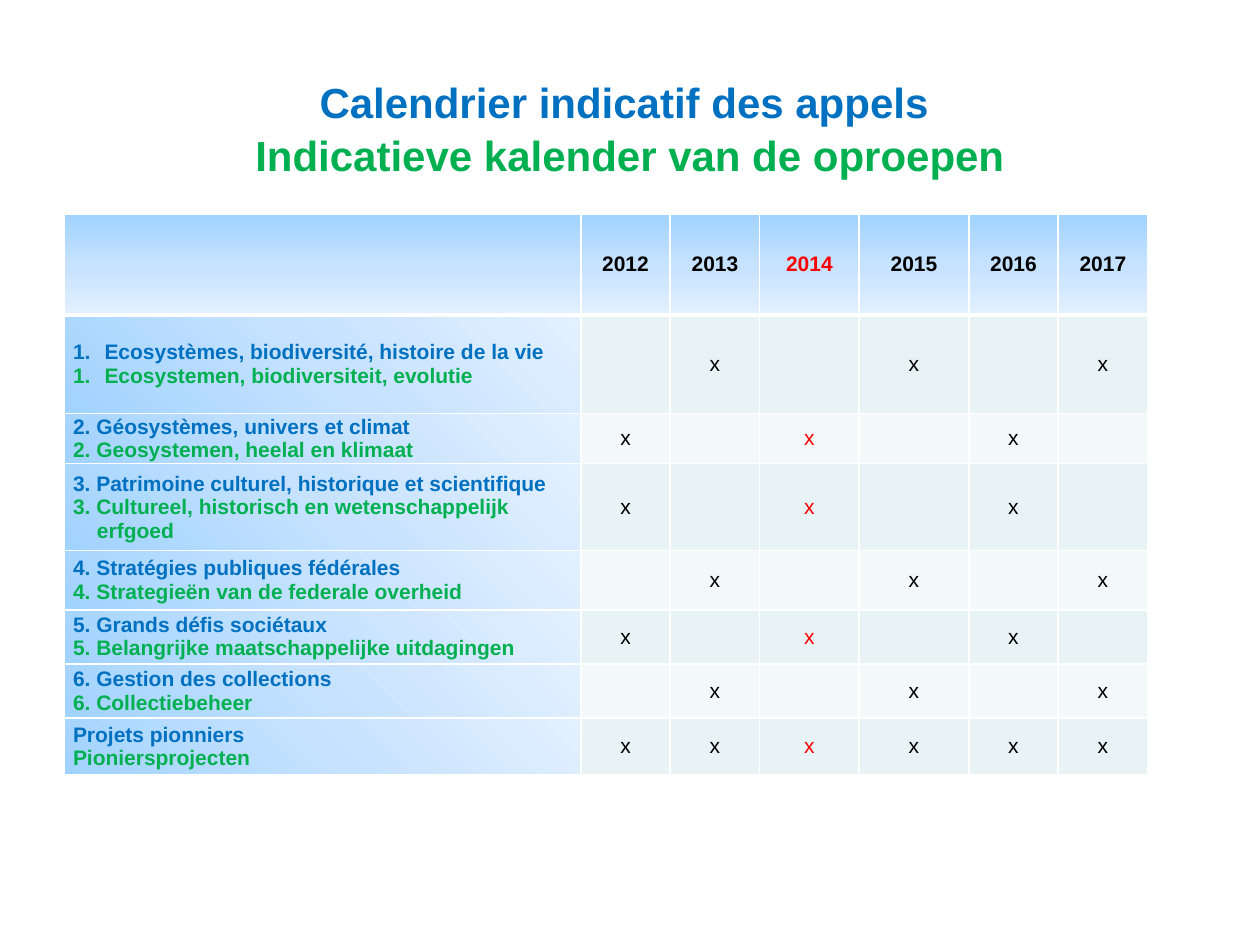
from dataclasses import dataclass

from lxml.etree import SubElement
from pptx import Presentation
from pptx.dml.color import RGBColor
from pptx.enum.text import MSO_ANCHOR as Anchor, PP_ALIGN as Align
from pptx.oxml.ns import qn
from pptx.util import Inches, Pt


@dataclass(frozen=True)
class Theme:
    font: str = "Arial"
    title_size: int = 24
    body_size: int = 12
    french: str = "0070C0"
    dutch: str = "00B050"
    text: str = "000000"
    current: str = "FF0000"
    border: str = "FFFFFF"
    bands: tuple = ("E7F3F4", "F3F9FA")
    gradient: tuple = ((0, "A1D3FF"), (50, "C6E2FF"), (100, "E3F0FF"))


@dataclass(frozen=True)
class Axis:
    """A research axis, its name in both languages and its call years."""
    french: str
    dutch: str
    years: range
    height: float
    hanging: float = 0
    numbered: bool = False


THEME = Theme()
YEARS = range(2012, 2018)
EVEN, ODD = YEARS[::2], YEARS[1::2]
CURRENT_YEAR = 2014
COL_WIDTHS = (4.1, 0.71, 0.71, 0.79, 0.87, 0.71, 0.71)
HEADER_HEIGHT = 0.8
AXES = (
    Axis("Ecosystèmes, biodiversité, histoire de la vie",
         "Ecosystemen, biodiversiteit, evolutie", ODD, 0.78, 0.25, True),
    Axis("2. Géosystèmes, univers et climat",
         "2. Geosystemen, heelal en klimaat", EVEN, 0.4),
    Axis("3. Patrimoine culturel, historique et scientifique",
         "3. Cultureel, historisch en wetenschappelijk erfgoed", EVEN, 0.69, 0.19),
    Axis("4. Stratégies publiques fédérales",
         "4. Strategieën van de federale overheid", ODD, 0.47),
    Axis("5. Grands défis sociétaux",
         "5. Belangrijke maatschappelijke uitdagingen", EVEN, 0.43),
    Axis("6. Gestion des collections", "6. Collectiebeheer", ODD, 0.43),
    Axis("Projets pionniers", "Pioniersprojecten", YEARS, 0.45),
)


def add_run(p, text: str, color: str, size: int, bold: bool = True) -> None:
    r = p.add_run()
    r.text = text
    r.font.name, r.font.size, r.font.bold = THEME.font, Pt(size), bold
    r.font.color.rgb = RGBColor.from_string(color)


def add_title(slide) -> None:
    s = slide.shapes.add_textbox(Inches(0.5), Inches(0.52), Inches(9), Inches(1.03))
    tf = s.text_frame
    tf.word_wrap = True
    tf.vertical_anchor = Anchor.MIDDLE
    tf.margin_bottom = Inches(0.11)
    p = tf.paragraphs[0]
    p.alignment = Align.CENTER
    p.line_spacing = 1.05
    add_run(p, "Calendrier indicatif des appels ", THEME.french, THEME.title_size)
    p.add_line_break()
    add_run(p, "Indicatieve kalender van de oproepen", THEME.dutch, THEME.title_size)


def set_borders(cell, top: int = 1, bottom: int = 1) -> None:
    tc_pr = cell._tc.get_or_add_tcPr()
    for side, width in (("L", 1), ("R", 1), ("T", top), ("B", bottom)):
        ln = SubElement(tc_pr, qn(f"a:ln{side}"), w=str(Pt(width)))
        fill = SubElement(ln, qn("a:solidFill"))
        SubElement(fill, qn("a:srgbClr"), val=THEME.border)


def fill_gradient(cell, angle: int) -> None:
    grad = SubElement(cell._tc.get_or_add_tcPr(), qn("a:gradFill"), rotWithShape="1")
    stops = SubElement(grad, qn("a:gsLst"))
    for position, color in THEME.gradient:
        stop = SubElement(stops, qn("a:gs"), pos=str(position * 1000))
        SubElement(stop, qn("a:srgbClr"), val=color)
    SubElement(grad, qn("a:lin"), ang=str(angle * 60000), scaled="0")


def fill_solid(cell, color: str) -> None:
    cell.fill.solid()
    cell.fill.fore_color.rgb = RGBColor.from_string(color)


def prepare_cell(cell) -> None:
    cell.vertical_anchor = Anchor.MIDDLE
    cell.margin_left = cell.margin_right = Inches(0.07)
    cell.margin_top = cell.margin_bottom = 0
    cell.text_frame.paragraphs[0].font.size = Pt(THEME.body_size)


def write_centred(cell, text: str, year: int, bold: bool) -> None:
    p = cell.text_frame.paragraphs[0]
    p.alignment = Align.CENTER
    color = THEME.current if year == CURRENT_YEAR else THEME.text
    add_run(p, text, color, THEME.body_size, bold)


def set_indent(p, hanging: float, numbered: bool) -> None:
    p_pr = p._p.get_or_add_pPr()
    p_pr.set("marL", str(Inches(hanging)))
    p_pr.set("indent", str(-Inches(hanging)))
    if numbered:
        SubElement(p_pr, qn("a:buFont"), typeface="+mj-lt")
        SubElement(p_pr, qn("a:buAutoNum"), type="arabicPeriod")


def write_axis(cell, axis: Axis) -> None:
    tf = cell.text_frame
    first, second = tf.paragraphs[0], tf.add_paragraph()
    # Separate levels let each language start its own numbering
    first.level = 1 if axis.numbered else 0
    set_indent(first, axis.hanging if axis.numbered else 0, axis.numbered)
    set_indent(second, axis.hanging, axis.numbered)
    add_run(first, axis.french, THEME.french, THEME.body_size)
    add_run(second, axis.dutch, THEME.dutch, THEME.body_size)


def add_calendar(slide) -> None:
    heights = (HEADER_HEIGHT, *(axis.height for axis in AXES))
    table = slide.shapes.add_table(
        len(heights), len(COL_WIDTHS), Inches(0.51), Inches(1.7),
        Inches(sum(COL_WIDTHS)), Inches(sum(heights))).table
    table.first_row = table.horz_banding = False
    for column, width in zip(table.columns, COL_WIDTHS):
        column.width = Inches(width)
    for row, height in zip(table.rows, heights):
        row.height = Inches(height)
    for cell in table.iter_cells():
        prepare_cell(cell)

    # Header row
    for col in range(len(COL_WIDTHS)):
        cell = table.cell(0, col)
        set_borders(cell, bottom=3)
        fill_gradient(cell, 90)
        if col:
            year = YEARS[col - 1]
            write_centred(cell, str(year), year, True)

    # One row per axis
    for row, axis in enumerate(AXES, 1):
        top = 3 if row == 1 else 1
        name = table.cell(row, 0)
        set_borders(name, top=top)
        fill_gradient(name, 315)
        write_axis(name, axis)
        for col, year in enumerate(YEARS, 1):
            cell = table.cell(row, col)
            set_borders(cell, top=top)
            fill_solid(cell, THEME.bands[(row - 1) % 2])
            if year in axis.years:
                write_centred(cell, "x", year, False)


def main() -> None:
    prs = Presentation()
    prs.slide_width, prs.slide_height = Inches(10), Inches(7.5)
    slide = prs.slides.add_slide(prs.slide_layouts[6])
    add_title(slide)
    add_calendar(slide)
    prs.save("out.pptx")


if __name__ == "__main__":
    main()
